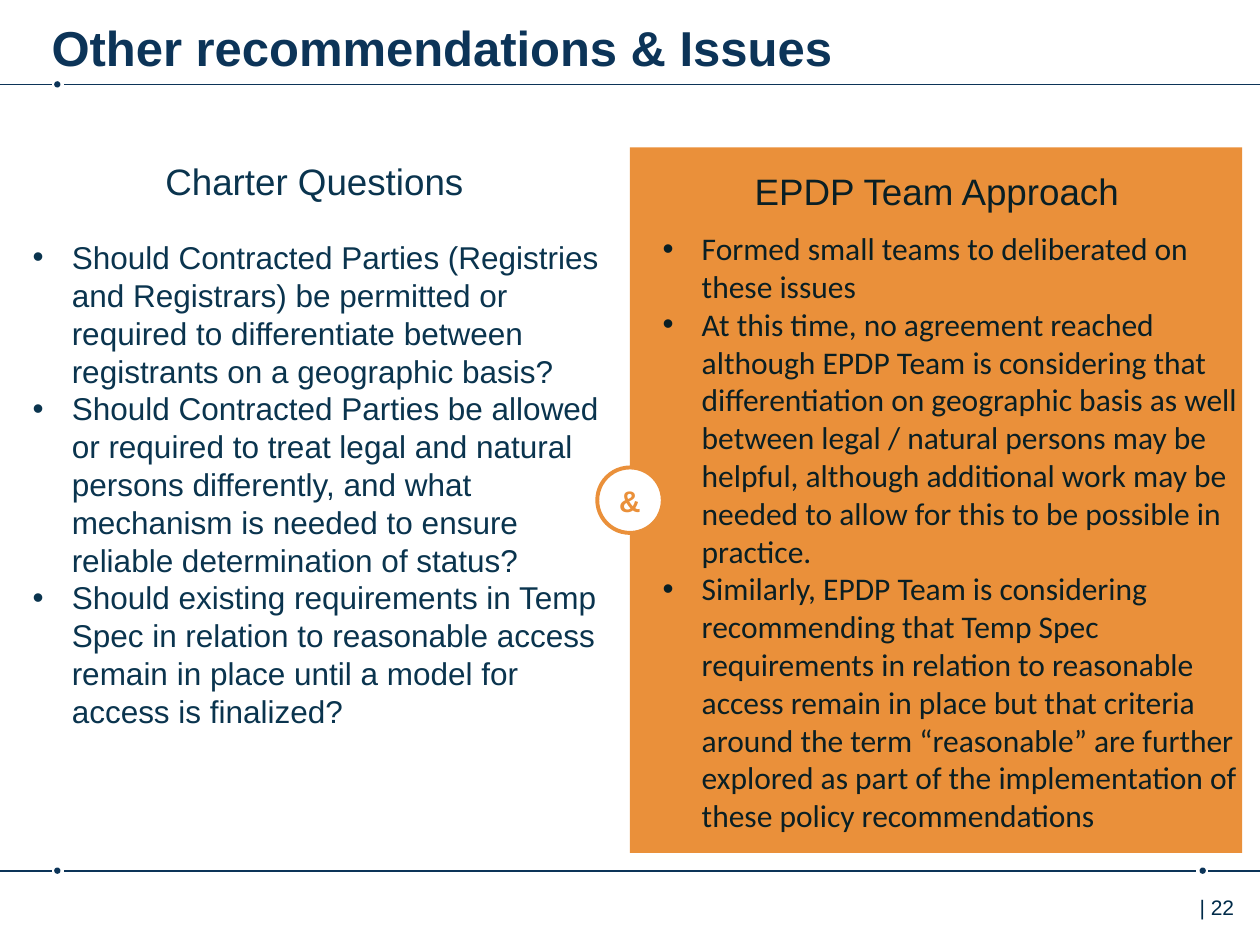
from dataclasses import dataclass

import pptx
import pptx.dml.color
import pptx.enum.shapes
import pptx.enum.text
import pptx.oxml.ns
import pptx.util
from lxml import etree

Inches = pptx.util.Inches
Pt = pptx.util.Pt
Color = pptx.dml.color.RGBColor
Align = pptx.enum.text.PP_ALIGN
Anchor = pptx.enum.text.MSO_ANCHOR
Shape = pptx.enum.shapes.MSO_SHAPE


@dataclass(frozen=True)
class Theme:
    navy: Color = Color.from_string("0C3458")
    left_text: Color = Color.from_string("0A344E")
    right_text: Color = Color.from_string("0A1F24")
    page_number: Color = Color.from_string("002B49")
    orange: Color = Color.from_string("EA903A")
    white: Color = Color.from_string("FFFFFF")
    heading_font: str = "Arial"
    title_size: float = 28
    heading_size: float = 21
    body_size: float = 18
    badge_size: float = 17
    number_size: float = 12
    body_leading: float = 21.6


THEME = Theme()


@dataclass(frozen=True)
class Area:
    left: float
    top: float
    width: float
    height: float

    def lengths(self) -> tuple:
        return tuple(Inches(n) for n in (self.left, self.top, self.width, self.height))


@dataclass(frozen=True)
class Column:
    heading: str
    heading_area: Area
    bullets: tuple
    body_area: Area
    body_font: str
    color: Color


@dataclass(frozen=True)
class Rule:
    y: float
    spans: tuple
    dots: tuple


COLUMNS = (
    Column(
        "Charter Questions",
        Area(0.99, 1.3, 3.01, 1.15),
        (
            "Should Contracted Parties (Registries and Registrars) be permitted or required "
            "to differentiate between registrants on a geographic basis?",
            "Should Contracted Parties be allowed or required to treat legal and natural "
            "persons differently, and what mechanism is needed to ensure reliable "
            "determination of status?",
            "Should existing requirements in Temp Spec in relation to reasonable access "
            "remain in place until a model for access is finalized?",
        ),
        Area(0.26, 1.89, 4.61, 1.4),
        "Arial",
        THEME.left_text,
    ),
    Column(
        "EPDP Team Approach",
        Area(5.93, 1.38, 3.01, 1.15),
        (
            "Formed small teams to deliberated on these issues",
            "At this time, no agreement reached although EPDP Team is considering that "
            "differentiation on geographic basis as well between legal / natural persons "
            "may be helpful, although additional work may be needed to allow for this to "
            "be possible in practice.",
            "Similarly, EPDP Team is considering recommending that Temp Spec requirements "
            "in relation to reasonable access remain in place but that criteria around the "
            "term “reasonable” are further explored as part of the implementation of these "
            "policy recommendations",
        ),
        Area(5.26, 1.82, 4.6, 1.4),
        "Calibri",
        THEME.right_text,
    ),
)

RULES = (
    Rule(0.67, ((0, 0.41), (0.51, 10)), (0.455,)),
    Rule(6.91, ((0, 0.41), (0.51, 9.49), (9.59, 10)), (0.455, 9.545)),
)
DOT_SIZE = 0.05


def set_margins(frame, sides: float = 0, top: float = 0, bottom: float = 0) -> None:
    frame.margin_left = frame.margin_right = Inches(sides)
    frame.margin_top, frame.margin_bottom = Inches(top), Inches(bottom)


def set_font(para, name: str, size: float, color: Color, bold: bool = False) -> None:
    para.font.name, para.font.size, para.font.bold = name, Pt(size), bold
    para.font.color.rgb = color


def add_filled_shape(page, kind, area: Area, fill: Color):
    shape = page.shapes.add_shape(kind, *area.lengths())
    shape.shadow.inherit = False
    shape.fill.solid()
    shape.fill.fore_color.rgb = fill
    shape.line.fill.background()
    return shape


def add_text_frame(page, area: Area):
    frame = page.shapes.add_textbox(*area.lengths()).text_frame
    frame.word_wrap = True
    set_margins(frame)
    return frame


def add_bullet(para) -> None:
    """Give the paragraph a round bullet with a hanging indent."""
    properties = para._p.get_or_add_pPr()
    properties.set("marL", str(Inches(0.31)))
    properties.set("indent", str(-Inches(0.31)))
    qn = pptx.oxml.ns.qn
    etree.SubElement(properties, qn("a:buFont"), typeface="Arial")
    etree.SubElement(properties, qn("a:buChar"), char="•")


def add_rule(page, rule: Rule) -> None:
    """Draw a horizontal line interrupted by dots."""
    for center in rule.dots:
        dot = Area(center - DOT_SIZE / 2, rule.y - DOT_SIZE / 2, DOT_SIZE, DOT_SIZE)
        add_filled_shape(page, Shape.OVAL, dot, THEME.navy)
    for start, end in rule.spans:
        line = page.shapes.add_connector(
            pptx.enum.shapes.MSO_CONNECTOR.STRAIGHT,
            Inches(start), Inches(rule.y), Inches(end), Inches(rule.y),
        )
        line.line.color.rgb = THEME.navy
        line.line.width = Pt(1)
        etree.SubElement(line._element.spPr, pptx.oxml.ns.qn("a:effectLst"))


def add_column(page, column: Column) -> None:
    heading = add_text_frame(page, column.heading_area).paragraphs[0]
    heading.text = column.heading
    heading.alignment = Align.CENTER
    heading.line_spacing = 0.9
    set_font(heading, THEME.heading_font, THEME.heading_size, column.color)

    frame = add_text_frame(page, column.body_area)
    for index, bullet in enumerate(column.bullets):
        para = frame.add_paragraph() if index else frame.paragraphs[0]
        para.text = bullet
        add_bullet(para)
        para.line_spacing = Pt(THEME.body_leading)
        set_font(para, column.body_font, THEME.body_size, column.color)


def add_badge(page) -> None:
    badge = add_filled_shape(page, Shape.OVAL, Area(4.74, 3.71, 0.52, 0.52), THEME.white)
    badge.line.color.rgb = THEME.orange
    badge.line.width = Pt(2.25)
    frame = badge.text_frame
    set_margins(frame)
    frame.vertical_anchor = Anchor.MIDDLE
    para = frame.paragraphs[0]
    para.text = "&"
    para.alignment = Align.CENTER
    set_font(para, THEME.heading_font, THEME.badge_size, THEME.orange, bold=True)


def format_title(page) -> None:
    title = page.shapes.title
    title.left, title.top, title.width, title.height = Area(0.41, 0.05, 8.76, 0.49).lengths()
    frame = title.text_frame
    set_margins(frame, top=0.09)
    frame.vertical_anchor = Anchor.TOP
    frame.auto_size = pptx.enum.text.MSO_AUTO_SIZE.NONE
    para = frame.paragraphs[0]
    para.text = "Other recommendations & Issues"
    para.alignment = Align.LEFT
    set_font(para, THEME.heading_font, THEME.title_size, THEME.navy, bold=True)


def main() -> None:
    deck = pptx.Presentation()
    deck.slide_width, deck.slide_height = Inches(10), Inches(7.5)
    page = deck.slides.add_slide(deck.slide_layouts[5])
    format_title(page)
    for rule in RULES:
        add_rule(page, rule)
    number = add_text_frame(page, Area(9.52, 7.1, 0.48, 0.3)).paragraphs[0]
    number.text = "| 22"
    set_font(number, THEME.heading_font, THEME.number_size, THEME.page_number)
    add_filled_shape(page, Shape.RECTANGLE, Area(5, 1.17, 4.86, 5.6), THEME.orange)
    add_badge(page)
    for column in COLUMNS:
        add_column(page, column)
    deck.save("out.pptx")


if __name__ == "__main__":
    main()
